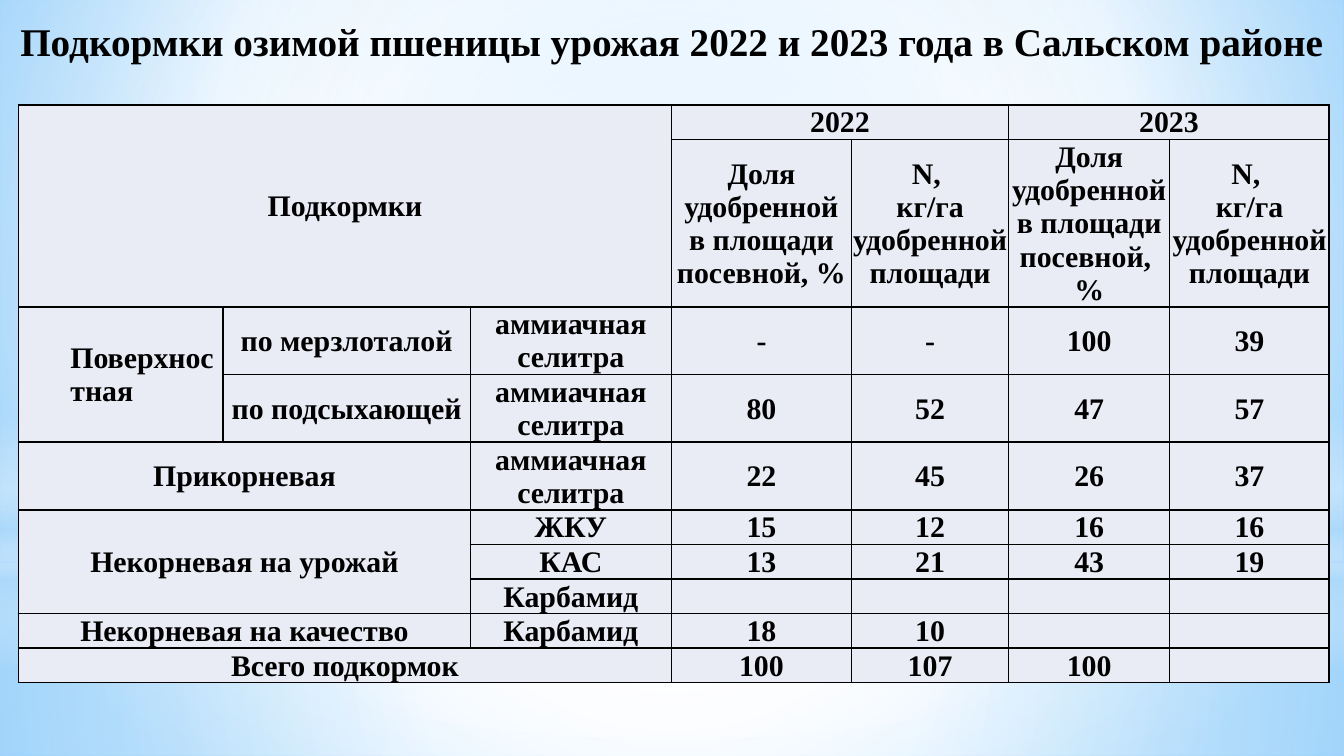
from dataclasses import dataclass

from lxml import etree
from pptx import Presentation
from pptx import util as u
from pptx.dml.color import RGBColor
from pptx.enum import shapes, text
from pptx.oxml.ns import qn


@dataclass(frozen=True)
class Theme:
    font: str = "Times New Roman"
    ink: str = "000000"
    cell: str = "E9EBF5"
    white: str = "FFFFFF"
    haze: str = "B4DCFA"
    sky: str = "9ED5FF"
    deep_sky: str = "5BB9FF"
    title_size: float = 21
    table_size: float = 16
    border: float = 1
    inset: float = 0.72


class SlideBuilder:
    def __init__(self, presentation, theme):
        self.theme = theme
        self.slide = presentation.slides.add_slide(presentation.slide_layouts[5])

    def style(self, paragraph, size, align=text.PP_ALIGN.CENTER):
        paragraph.alignment = align
        font = paragraph.font
        font.name, font.size, font.bold = self.theme.font, u.Pt(size), True
        font.color.rgb = RGBColor.from_string(self.theme.ink)

    def gradient(self, fill, element, stops, centre=None):
        """Stops are (position %, colour, opacity %); centre gives a circular path."""
        fill.gradient()
        gradient = element.find(".//" + qn("a:gradFill"))
        for child in list(gradient):
            gradient.remove(child)
        stop_list = etree.SubElement(gradient, qn("a:gsLst"))
        for position, colour, opacity in stops:
            stop = etree.SubElement(stop_list, qn("a:gs"), pos=str(position * 1000))
            tone = etree.SubElement(stop, qn("a:srgbClr"), val=colour)
            if opacity < 100:
                etree.SubElement(tone, qn("a:alpha"), val=str(opacity * 1000))
        if centre:
            path = etree.SubElement(gradient, qn("a:path"), path="circle")
            sides = {side: str(value * 1000) for side, value in zip("ltrb", centre)}
            etree.SubElement(path, qn("a:fillToRect"), **sides)
        else:
            etree.SubElement(gradient, qn("a:lin"), ang="5400000", scaled="0")

    def background(self, stops, centre):
        self.gradient(self.slide.background.fill, self.slide.element, stops, centre)

    def glow(self, kind, top, height, stops, centre=None):
        shape = self.slide.shapes.add_shape(kind, 0, u.Pt(top), u.Pt(720), u.Pt(height))
        shape.shadow.inherit = False
        shape.line.fill.background()
        self.gradient(shape.fill, shape.element, stops, centre)

    def title(self, wording, left, top, width, height):
        title = self.slide.shapes.title
        title.left, title.top = u.Pt(left), u.Pt(top)
        title.width, title.height = u.Pt(width), u.Pt(height)
        frame = title.text_frame
        frame.text = wording
        frame.word_wrap = True
        frame.margin_left = frame.margin_right = 0
        frame.vertical_anchor = text.MSO_ANCHOR.MIDDLE
        self.style(frame.paragraphs[0], self.theme.title_size)
        # Bring the title in front of the glows
        title.element.getparent().append(title.element)

    def cell(self, cell, wording):
        cell.text = wording
        cell.vertical_anchor = text.MSO_ANCHOR.MIDDLE
        cell.margin_left = cell.margin_right = cell.margin_top = u.Pt(self.theme.inset)
        cell.margin_bottom = 0
        self.style(cell.text_frame.paragraphs[0], self.theme.table_size)
        properties = cell._tc.get_or_add_tcPr()
        for side in ("lnL", "lnR", "lnT", "lnB"):
            line = etree.SubElement(properties, qn("a:" + side),
                                    w=str(u.Pt(self.theme.border)))
            solid = etree.SubElement(line, qn("a:solidFill"))
            etree.SubElement(solid, qn("a:srgbClr"), val=self.theme.ink)
        cell.fill.solid()
        cell.fill.fore_color.rgb = RGBColor.from_string(self.theme.cell)

    def table(self, left, top, widths, heights, rows, merges):
        frame = self.slide.shapes.add_table(
            len(heights), len(widths), u.Pt(left), u.Pt(top),
            u.Pt(sum(widths)), u.Pt(sum(heights)))
        table = frame.table
        table.first_row = table.horz_banding = False
        for column, width in zip(table.columns, widths):
            column.width = u.Pt(width)
        for row, height, wordings in zip(table.rows, heights, rows):
            row.height = u.Pt(height)
            for cell, wording in zip(row.cells, wordings):
                self.cell(cell, wording)
        for first_row, first_column, last_row, last_column in merges:
            table.cell(first_row, first_column).merge(table.cell(last_row, last_column))
        return table

    def indent(self, cell, distance):
        paragraph = cell.text_frame.paragraphs[0]
        paragraph.alignment = text.PP_ALIGN.LEFT
        paragraph.level = 1
        properties = paragraph._p.get_or_add_pPr()
        properties.set("marL", str(u.Pt(distance)))
        properties.set("indent", "0")


SHARE = "Доля удобренной в площади посевной, %"
SHARE_BROKEN = "Доля удобренной в площади посевной, \v%"
DOSE = "N, \vкг/га удобренной площади"
NITRATE = "аммиачная селитра"
ROWS = [
    ("Подкормки", "", "", "2022", "", "2023", ""),
    ("", "", "", SHARE, DOSE, SHARE_BROKEN, DOSE),
    ("Поверхностная", "по мерзлоталой", NITRATE, "-", "-", "100", "39"),
    ("", "по подсыхающей", NITRATE, "80", "52", "47", "57"),
    ("Прикорневая", "", NITRATE, "22", "45", "26", "37"),
    ("Некорневая на урожай", "", "ЖКУ", "15", "12", "16", "16"),
    ("", "", "КАС", "13", "21", "43", "19"),
    ("", "", "Карбамид", "", "", "", ""),
    ("Некорневая на качество", "", "Карбамид", "18", "10", "", ""),
    ("Всего подкормок", "", "", "100", "107", "100", ""),
]
# First row, first column, last row, last column
MERGES = [(0, 0, 1, 2), (0, 3, 0, 4), (0, 5, 0, 6), (2, 0, 3, 0),
          (4, 0, 4, 1), (5, 0, 7, 1), (8, 0, 8, 1), (9, 0, 9, 2)]
COLUMN_WIDTHS = [109.5, 132.5, 107.7, 96.5, 84.2, 86.3, 85.5]
ROW_HEIGHTS = [18.3, 89.4] + [35.9] * 3 + [18.3] * 5


def main():
    presentation = Presentation()
    presentation.slide_width, presentation.slide_height = u.Pt(720), u.Pt(405)
    theme = Theme()
    builder = SlideBuilder(presentation, theme)
    white, haze = theme.white, theme.haze
    middle = (50, 50, 50, 50)
    rectangle = shapes.MSO_SHAPE.RECTANGLE

    # Sky background with soft glows
    builder.background([(0, theme.sky, 100), (60, white, 100),
                        (100, theme.deep_sky, 100)], (20, 10, 20, 60))
    builder.glow(rectangle, 301.5, 103.5,
                 [(0, white, 91), (37, white, 76), (100, haze, 79)], middle)
    builder.glow(rectangle, 0, 301.5,
                 [(0, white, 89), (48, white, 62), (100, haze, 79)], middle)
    builder.glow(rectangle, 222.5, 135,
                 [(0, white, 0), (29, white, 30), (45, haze, 40),
                  (55, white, 26), (65, haze, 60), (100, white, 0)])
    builder.glow(shapes.MSO_SHAPE.OVAL, 94.5, 301.5,
                 [(0, white, 100), (56, white, 0)], middle)

    # Fertilising table
    table = builder.table(10, 56.2, COLUMN_WIDTHS, ROW_HEIGHTS, ROWS, MERGES)
    builder.indent(table.cell(2, 0), 27)

    # Title
    builder.title("Подкормки озимой пшеницы урожая 2022 и 2023 года в Сальском районе",
                  3, 3, 714, 38)
    presentation.save("out.pptx")


if __name__ == "__main__":
    main()
